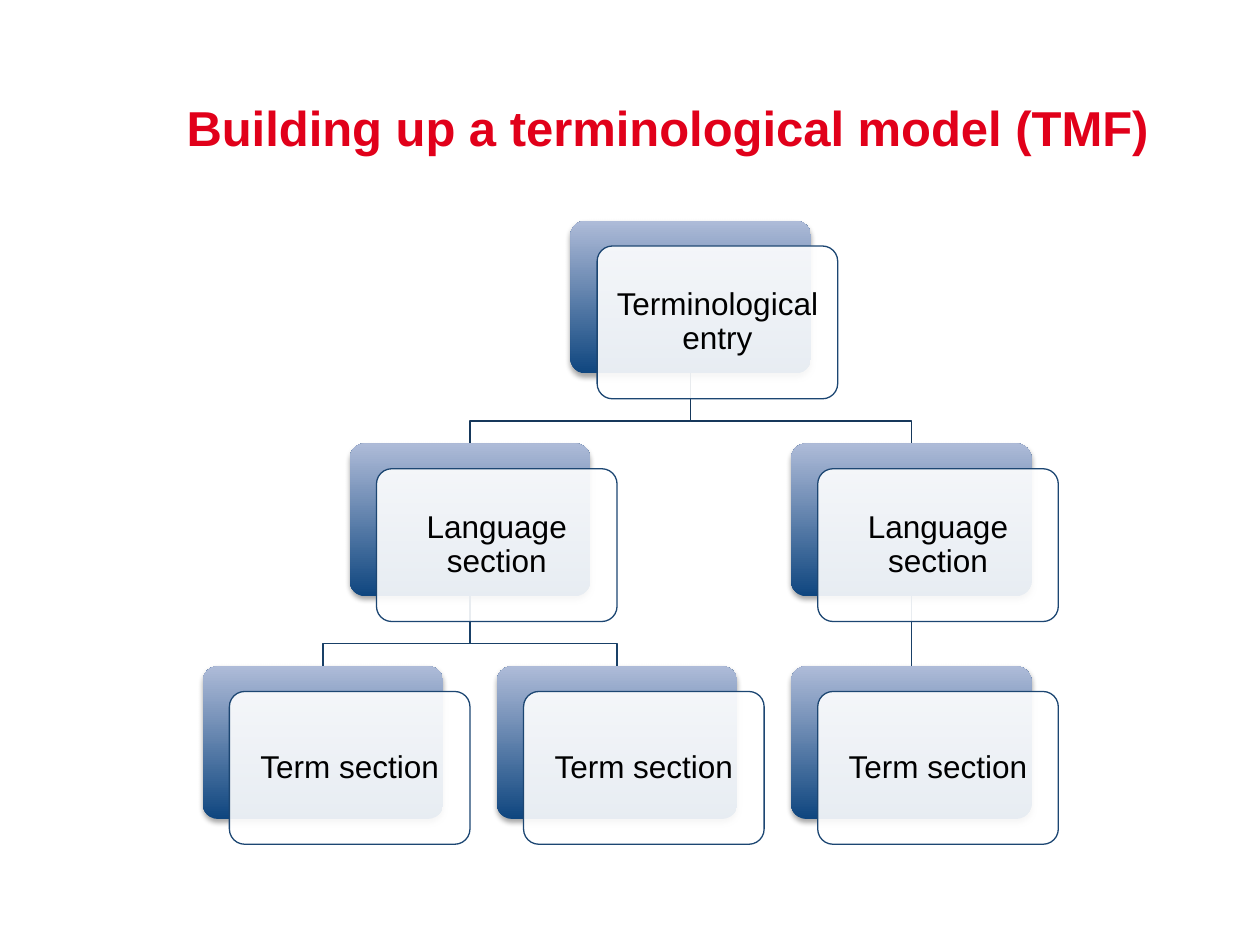
"""Build a slide with the tree of a terminological model."""
from lxml import etree
from pptx import Presentation
from pptx.dml.color import RGBColor
from pptx.enum.shapes import MSO_CONNECTOR as Link, MSO_SHAPE as Shape
from pptx.enum.text import MSO_ANCHOR as Anchor, PP_ALIGN as Align
from pptx.oxml import parse_xml
from pptx.oxml.ns import nsdecls, qn
from pptx.util import Cm, Pt

RED = RGBColor(0xE1, 0x00, 0x1A)
BLACK = RGBColor(0x00, 0x00, 0x00)
WHITE = RGBColor(0xFF, 0xFF, 0xFF)
DEEP_BLUE = RGBColor(0x0F, 0x46, 0x7F)
PALE_BLUE = RGBColor(0xAE, 0xBB, 0xD8)
EDGE_BLUE = RGBColor(0x1C, 0x46, 0x72)
UPPER_LINK = RGBColor(0x16, 0x38, 0x5B)
LOWER_LINK = RGBColor(0x19, 0x40, 0x67)

CARD_WIDTH, CARD_HEIGHT = Cm(4.85), Cm(3.08)
FIRST_CENTRE, COLUMN_PITCH = Cm(6.51), Cm(5.93)
FIRST_TOP, ROW_PITCH = Cm(4.45), Cm(4.49)
FRONT_SHIFT_X, FRONT_SHIFT_Y = Cm(0.54), Cm(0.51)
LINK_DROP = Cm(0.96)

SECTIONS = [
    ("Terminological entry", 1.25, 0, None),
    ("Language section", 0.5, 1, 0),
    ("Language section", 2, 1, 0),
    ("Term section", 0, 2, 1),
    ("Term section", 1, 2, 1),
    ("Term section", 2, 2, 2),
]


class TreeSlide:
    """Hold the style and the current slide of the tree."""

    font_name = "Arial"
    line_width = Pt(0.75)

    def __init__(self, presentation):
        self.slide = presentation.slides.add_slide(presentation.slide_layouts[5])
        self.shapes = self.slide.shapes

    def style_text(self, paragraph, size, color, bold=False):
        for run in paragraph.runs:
            run.font.name = self.font_name
            run.font.size = Pt(size)
            run.font.bold = bold
            run.font.color.rgb = color

    def style_line(self, line, color):
        line.color.rgb = color
        line.width = self.line_width

    def title(self, wording):
        title = self.shapes.title
        title.left, title.top = Cm(3.76), Cm(0.97)
        title.width, title.height = Cm(20.96), Cm(3.18)
        frame = title.text_frame
        frame.text = wording
        frame.vertical_anchor = Anchor.MIDDLE
        frame.margin_left = frame.margin_right = 0
        frame.margin_top = frame.margin_bottom = 0
        heading = frame.paragraphs[0]
        heading.alignment = Align.LEFT
        self.style_text(heading, 28, RED, bold=True)

    def card(self, left, top):
        card = self.shapes.add_shape(
            Shape.ROUNDED_RECTANGLE, left, top, CARD_WIDTH, CARD_HEIGHT)
        card.adjustments[0] = 0.1
        card.shadow.inherit = False
        return card

    def back_card(self, column, row):
        left = FIRST_CENTRE + round(column * COLUMN_PITCH) - CARD_WIDTH // 2
        back = self.card(left, FIRST_TOP + row * ROW_PITCH)
        back.fill.gradient()
        back.fill.gradient_angle = 90
        for stop, color in zip(back.fill.gradient_stops, (DEEP_BLUE, PALE_BLUE)):
            stop.color.rgb = color
        back.line.fill.background()
        effects = back._element.spPr.find(qn("a:effectLst"))
        effects.append(parse_xml(
            f'<a:outerShdw {nsdecls("a")} blurRad="40000" dist="23000" '
            'dir="5400000" rotWithShape="0"><a:srgbClr val="000000">'
            '<a:alpha val="35000"/></a:srgbClr></a:outerShdw>'))
        return back

    def front_card(self, back, wording):
        front = self.card(back.left + FRONT_SHIFT_X, back.top + FRONT_SHIFT_Y)
        front.fill.solid()
        front.fill.fore_color.rgb = WHITE
        white = front._element.spPr.find(qn("a:solidFill"))[0]
        etree.SubElement(white, qn("a:alpha"), val="90000")
        self.style_line(front.line, EDGE_BLUE)
        frame = front.text_frame
        frame.text = wording
        frame.word_wrap = True
        frame.vertical_anchor = Anchor.MIDDLE
        frame.margin_left = frame.margin_right = Cm(0.18)
        frame.margin_top = frame.margin_bottom = Cm(0.18)
        label = frame.paragraphs[0]
        label.alignment = Align.CENTER
        label.line_spacing = 0.9
        self.style_text(label, 18, BLACK)

    def straight_link(self, parent, child, color):
        link = self.shapes.add_connector(Link.STRAIGHT, 0, 0, 0, 0)
        link.begin_connect(parent, 2)
        link.end_connect(child, 0)
        etree.SubElement(link._element.spPr, qn("a:effectLst"))
        self.style_line(link.line, color)

    def bent_link(self, parent, child, color):
        start_x = parent.left + CARD_WIDTH // 2
        start_y = parent.top + CARD_HEIGHT
        end_x = child.left + CARD_WIDTH // 2
        bend_y = start_y + LINK_DROP
        outline = self.shapes.build_freeform(start_x, start_y)
        outline.add_line_segments(
            [(start_x, bend_y), (end_x, bend_y), (end_x, child.top)], close=False)
        link = outline.convert_to_shape()
        link.shadow.inherit = False
        link.fill.background()
        self.style_line(link.line, color)

    def link(self, parent, child, color):
        straight = parent.left == child.left
        draw = self.straight_link if straight else self.bent_link
        draw(parent, child, color)


def main():
    presentation = Presentation()
    presentation.slide_width, presentation.slide_height = Cm(25.4), Cm(19.05)
    tree = TreeSlide(presentation)
    tree.title("Building up a terminological model (TMF)")
    backs = [tree.back_card(column, row) for _, column, row, _ in SECTIONS]
    for back, (_, _, row, parent) in zip(backs, SECTIONS):
        if parent is not None:
            tree.link(backs[parent], back, UPPER_LINK if row == 1 else LOWER_LINK)
    for back, (wording, *_) in zip(backs, SECTIONS):
        tree.front_card(back, wording)
    presentation.save("out.pptx")


if __name__ == "__main__":
    main()
